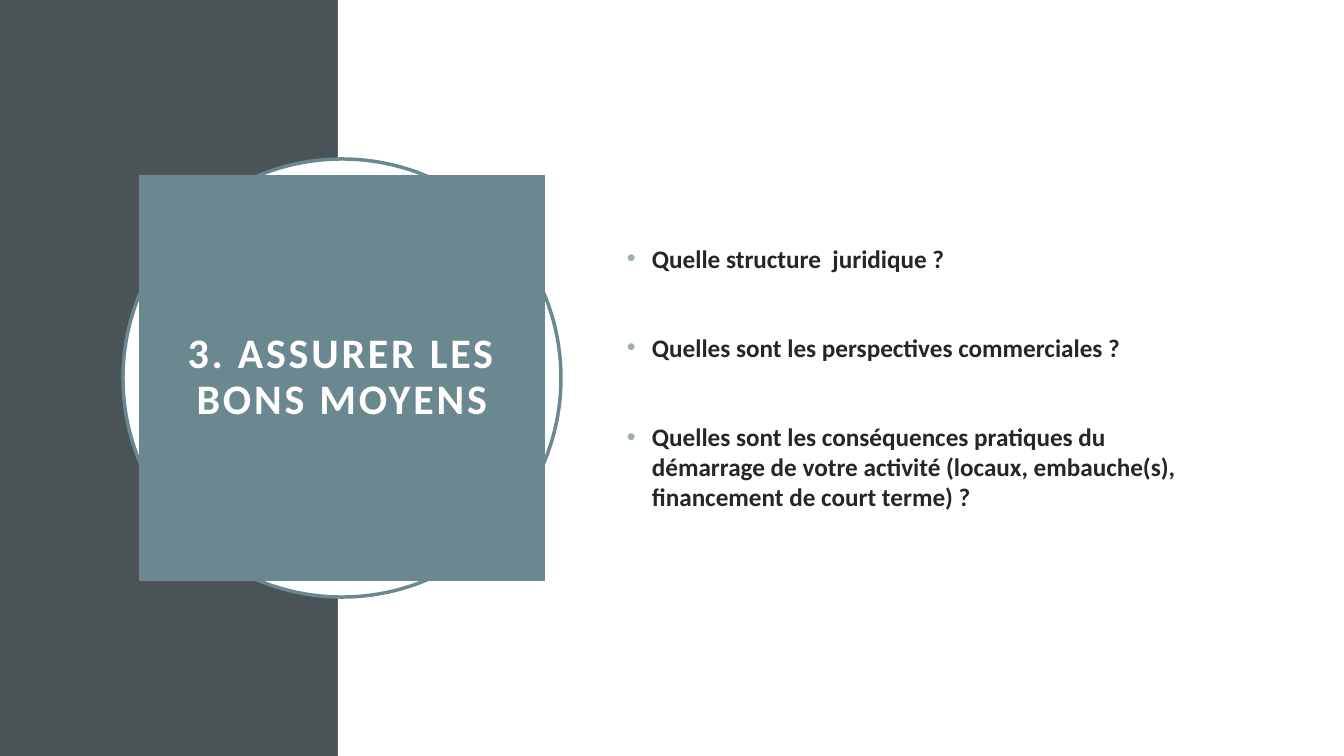
from dataclasses import dataclass

from lxml import etree
from pptx import Presentation
from pptx.dml.color import RGBColor
from pptx.enum.shapes import MSO_SHAPE
from pptx.enum.text import MSO_ANCHOR, MSO_AUTO_SIZE, PP_ALIGN
from pptx.oxml.ns import qn
from pptx.util import Emu, Pt

RECTANGLE, OVAL = MSO_SHAPE.RECTANGLE, MSO_SHAPE.OVAL
MIDDLE = MSO_ANCHOR.MIDDLE
CENTER, LEFT = PP_ALIGN.CENTER, PP_ALIGN.LEFT
NO_AUTOFIT = MSO_AUTO_SIZE.NONE

SLATE = RGBColor(0x4A, 0x53, 0x56)
TEAL = RGBColor(0x6B, 0x88, 0x91)
MIST = RGBColor(0x9B, 0xAF, 0xB5)
INK = RGBColor(0x26, 0x26, 0x26)
WHITE = RGBColor(0xFF, 0xFF, 0xFF)

FONT = "Calibri"
EMU_PER_PX = 914400 / 100.8
SLIDE_W, SLIDE_H = 1344, 756
BAND_W = 338
TITLE_INSET = 20
BULLET_INDENT = 25
FIRST_GAP, QUESTION_GAP = Pt(10), Pt(42)

TITLE = "3. ASSURER LES BONS MOYENS"
QUESTIONS = (
    "Quelle structure  juridique ?",
    "Quelles sont les perspectives commerciales ?",
    "Quelles sont les conséquences pratiques du démarrage de votre activité "
    "(locaux, embauche(s), financement de court terme) ?",
)


@dataclass(frozen=True)
class Box:
    left: int
    top: int
    width: int
    height: int


@dataclass(frozen=True)
class Backdrop:
    kind: MSO_SHAPE
    box: Box
    fill: RGBColor
    outline: RGBColor | None = None


BACKDROPS = (
    Backdrop(RECTANGLE, Box(0, 0, BAND_W, SLIDE_H), SLATE),
    Backdrop(RECTANGLE, Box(BAND_W, 0, SLIDE_W - BAND_W, SLIDE_H), WHITE),
    Backdrop(OVAL, Box(123, 159, 438, 438), WHITE, TEAL),
)
TITLE_BOX = Box(139, 175, 406, 406)
QUESTIONS_BOX = Box(617, 154, 587, 447)


def px(length: int) -> Emu:
    return Emu(round(length * EMU_PER_PX))


def edges(box: Box) -> tuple[Emu, Emu, Emu, Emu]:
    return px(box.left), px(box.top), px(box.width), px(box.height)


def add_backdrop(slide, backdrop: Backdrop) -> None:
    shape = slide.shapes.add_shape(backdrop.kind, *edges(backdrop.box))
    shape.shadow.inherit = False
    shape.fill.solid()
    shape.fill.fore_color.rgb = backdrop.fill
    if backdrop.outline is None:
        shape.line.fill.background()
    else:
        shape.line.color.rgb = backdrop.outline
        shape.line.width = Pt(2.5)


def add_bold_run(paragraph, text: str, size: int, color: RGBColor):
    run = paragraph.add_run()
    run.text = text
    run.font.name = FONT
    run.font.size = Pt(size)
    run.font.bold = True
    run.font.color.rgb = color
    return run


def set_bullet(paragraph) -> None:
    properties = paragraph._p.get_or_add_pPr()
    properties.set("marL", str(px(BULLET_INDENT)))
    properties.set("indent", str(-px(BULLET_INDENT)))
    color = etree.SubElement(properties, qn("a:buClr"))
    etree.SubElement(color, qn("a:srgbClr"), val=str(MIST))
    etree.SubElement(properties, qn("a:buFont"), typeface="Arial")
    etree.SubElement(properties, qn("a:buChar"), char="•")


def format_title(slide) -> None:
    title = slide.shapes.title
    title.left, title.top, title.width, title.height = edges(TITLE_BOX)
    title.fill.solid()
    title.fill.fore_color.rgb = TEAL
    frame = title.text_frame
    frame.word_wrap = True
    frame.auto_size = NO_AUTOFIT
    frame.vertical_anchor = MIDDLE
    frame.margin_left = frame.margin_right = px(TITLE_INSET)
    frame.margin_top = frame.margin_bottom = px(TITLE_INSET)
    paragraph = frame.paragraphs[0]
    paragraph.alignment = CENTER
    paragraph.line_spacing = 0.9
    run = add_bold_run(paragraph, TITLE, 30, WHITE)
    run.font._element.set("spc", "200")
    # Bring the title in front of the circle
    title.element.getparent().append(title.element)


def add_questions(slide) -> None:
    frame = slide.shapes.add_textbox(*edges(QUESTIONS_BOX)).text_frame
    frame.word_wrap = True
    frame.auto_size = NO_AUTOFIT
    frame.vertical_anchor = MIDDLE
    for index, question in enumerate(QUESTIONS):
        paragraph = frame.add_paragraph() if index else frame.paragraphs[0]
        paragraph.alignment = LEFT
        paragraph.space_before = QUESTION_GAP if index else FIRST_GAP
        set_bullet(paragraph)
        add_bold_run(paragraph, question, 18, INK)


def main() -> None:
    deck = Presentation()
    deck.slide_width, deck.slide_height = px(SLIDE_W), px(SLIDE_H)
    title_only = deck.slide_layouts.get_by_name("Title Only")
    slide = deck.slides.add_slide(title_only)

    # Side band, white panel and circle
    for backdrop in BACKDROPS:
        add_backdrop(slide, backdrop)

    # Title square and questions
    format_title(slide)
    add_questions(slide)

    deck.save("out.pptx")


if __name__ == "__main__":
    main()
